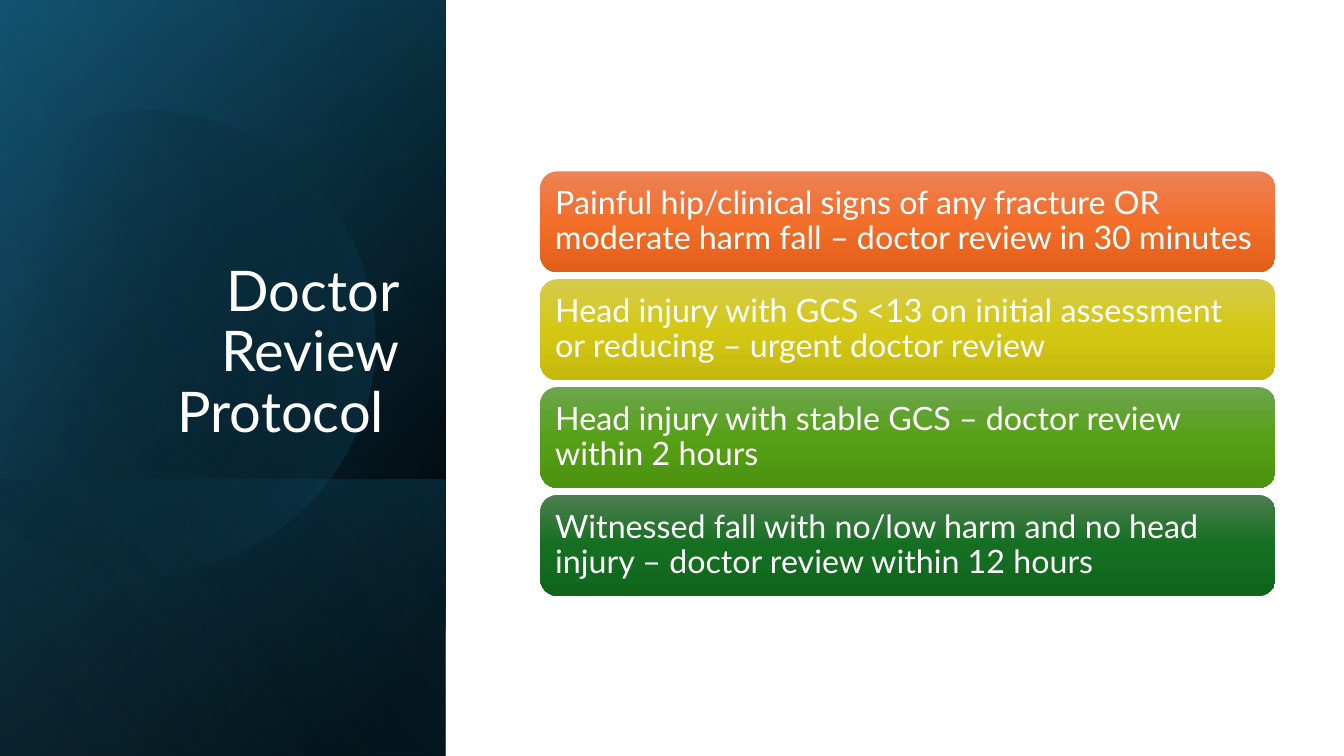
"""Build the doctor review protocol slide."""
import math

from pptx import Presentation
from pptx import util as u
from pptx.dml.color import RGBColor
from pptx.enum import shapes, text
from pptx.oxml import parse_xml
from pptx.oxml.ns import nsdecls

WHITE = RGBColor(0xFF, 0xFF, 0xFF)
BLACK = RGBColor(0x00, 0x00, 0x00)
NAVY = RGBColor(0x10, 0x48, 0x62)
TEAL = RGBColor(0x15, 0x60, 0x82)
SKY = RGBColor(0x46, 0xB1, 0xE1)
ORANGE = (RGBColor(0xED, 0x82, 0x57), RGBColor(0xF2, 0x6E, 0x29), RGBColor(0xE2, 0x5F, 0x1A))
YELLOW = (RGBColor(0xD5, 0xCB, 0x4E), RGBColor(0xD4, 0xC8, 0x15), RGBColor(0xC4, 0xB9, 0x0B))
LIME = (RGBColor(0x6D, 0xA6, 0x4E), RGBColor(0x56, 0xA0, 0x17), RGBColor(0x4C, 0x93, 0x0F))
GREEN = (RGBColor(0x4D, 0x7E, 0x50), RGBColor(0x15, 0x6F, 0x21), RGBColor(0x0F, 0x66, 0x1B))

FULL = (-1.54, 1.54, 7.5, 4.42)
LOWER = (0.84, 3.92, 2.74, 4.42)
PANELS = [
    (FULL, [(8, BLACK, 100), (100, NAVY, 100)], 50),
    (FULL, [(0, BLACK, 0), (99, TEAL, 46)], 30),
    (LOWER, [(2, TEAL, 29), (100, BLACK, 30)], 130),
]
SHEEN = (FULL, [(0, BLACK, 0), (99, SKY, 11)], 120)

DISC_START = (1.49, 1.1)
DISC_CURVES = [
    [(2.46, 1.12), (3.35, 1.77), (3.63, 2.75)],
    [(3.98, 3.97), (3.28, 5.23), (2.07, 5.58)],
    [(1.31, 5.8), (0.53, 5.61), (-0.03, 5.14)],
    [(-0.15, 5.03)],
    [(-0.15, 1.75)],
    [(0, 1.61)],
    [(0.23, 1.42), (0.5, 1.28), (0.8, 1.19)],
    [(1.03, 1.13), (1.26, 1.1), (1.49, 1.1)],
]
DISC_CENTRE = (1.58, 3.34)
DISC_ROTATION = 343.9

BARS = [
    ("Painful hip/clinical signs of any fracture OR moderate harm fall – doctor review in 30 minutes", ORANGE),
    ("Head injury with GCS <13 on initial assessment or reducing – urgent doctor review", YELLOW),
    ("Head injury with stable GCS – doctor review within 2 hours", LIME),
    ("Witnessed fall with no/low harm and no head injury – doctor review within 12 hours", GREEN),
]


def set_all(target, values):
    for name, value in values.items():
        setattr(target, name, value)


def paint(sp, stops, angle):
    sp.shadow.inherit = False
    sp.line.fill.background()
    sp.fill.background()
    gs = "".join(
        f'<a:gs pos="{pos * 1000}"><a:srgbClr val="{color}">'
        f'<a:alpha val="{alpha * 1000}"/></a:srgbClr></a:gs>'
        for pos, color, alpha in stops)
    grad = parse_xml(
        f'<a:gradFill {nsdecls("a")} rotWithShape="1"><a:gsLst>{gs}</a:gsLst>'
        f'<a:lin ang="{angle * 60000}" scaled="0"/></a:gradFill>')
    sp_pr = sp._element.spPr
    sp_pr.replace(sp_pr.find("{*}noFill"), grad)


def add_panel(s, box, stops, angle):
    sp = s.shapes.add_shape(shapes.MSO_SHAPE.RECTANGLE, *map(u.Inches, box))
    sp.rotation = 90
    sp._element.spPr.xfrm.set("flipH", "1")
    paint(sp, stops, angle)


def bezier(p0, p1, p2, p3, steps=16):
    for i in range(1, steps + 1):
        t = i / steps
        weights = ((1 - t) ** 3, 3 * t * (1 - t) ** 2, 3 * t * t * (1 - t), t ** 3)
        yield tuple(sum(w * p[k] for w, p in zip(weights, (p0, p1, p2, p3))) for k in (0, 1))


def unrotate(point):
    a = math.radians(360 - DISC_ROTATION)
    (cx, cy), (x, y) = DISC_CENTRE, point
    dx, dy = x - cx, y - cy
    return (u.Inches(cx + dx * math.cos(a) - dy * math.sin(a)),
            u.Inches(cy + dx * math.sin(a) + dy * math.cos(a)))


def add_disc(s):
    points = [DISC_START]
    for part in DISC_CURVES:
        points += bezier(points[-1], *part) if len(part) == 3 else part
    first, *rest = map(unrotate, points)
    fb = s.shapes.build_freeform(*first)
    fb.add_line_segments(rest, close=True)
    sp = fb.convert_to_shape()
    sp.rotation = DISC_ROTATION
    paint(sp, [(29, BLACK, 0), (100, TEAL, 43)], 30)


def write(tf, content, size, align, anchor):
    set_all(tf, {"word_wrap": True, "auto_size": text.MSO_AUTO_SIZE.NONE,
                 "vertical_anchor": anchor})
    p = tf.paragraphs[0]
    set_all(p, {"alignment": align, "line_spacing": 0.9})
    r = p.add_run()
    r.text = content
    set_all(r.font, {"name": "Lato", "size": u.Pt(size)})
    r.font.color.rgb = WHITE


def add_title(s):
    title = s.shapes.title
    set_all(title, {"left": u.Inches(0.64), "top": u.Inches(1.84),
                    "width": u.Inches(3.41), "height": u.Inches(2.62)})
    write(title.text_frame, "Doctor Review Protocol ", 40,
          text.PP_ALIGN.RIGHT, text.MSO_ANCHOR.BOTTOM)
    s.shapes._spTree.append(title._element)


def add_bar(s, top, content, colors):
    sp = s.shapes.add_shape(shapes.MSO_SHAPE.ROUNDED_RECTANGLE, u.Inches(5.36),
                            u.Inches(top), u.Inches(7.29), u.Inches(1))
    paint(sp, [(pos, color, 100) for pos, color in zip((0, 50, 100), colors)], 90)
    tf = sp.text_frame
    sides = ("left", "right", "top", "bottom")
    set_all(tf, {f"margin_{side}": u.Inches(0.1) for side in sides})
    write(tf, content, 23, text.PP_ALIGN.LEFT, text.MSO_ANCHOR.MIDDLE)


def main():
    prs = Presentation()
    set_all(prs, {"slide_width": u.Inches(13.33), "slide_height": u.Inches(7.5)})
    s = prs.slides.add_slide(prs.slide_layouts[5])
    for panel in PANELS:
        add_panel(s, *panel)
    add_disc(s)
    add_panel(s, *SHEEN)
    add_title(s)
    for i, (content, colors) in enumerate(BARS):
        add_bar(s, 1.7 + 1.07 * i, content, colors)
    prs.save("out.pptx")


if __name__ == "__main__":
    main()
